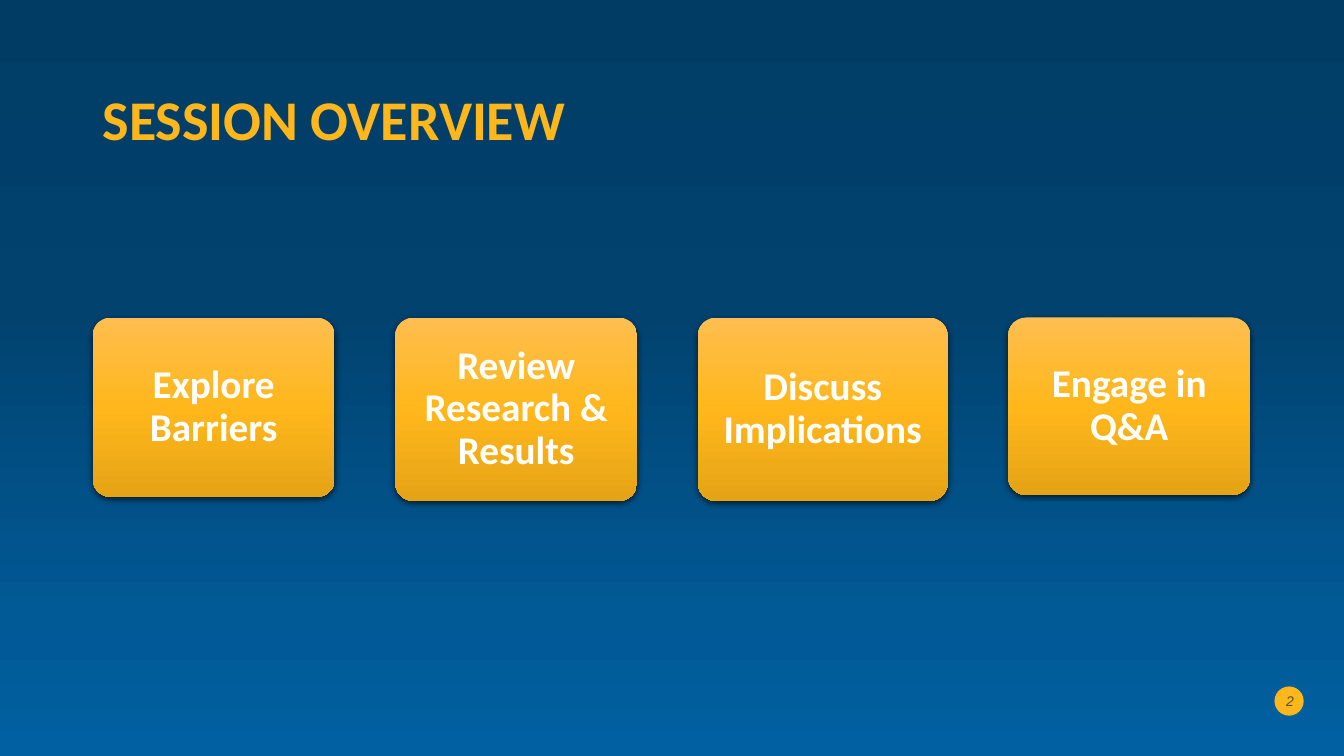
from lxml.etree import SubElement
from pptx import Presentation
from pptx.dml.color import RGBColor
from pptx.enum.shapes import MSO_SHAPE as Shape
from pptx.enum.text import MSO_ANCHOR as Anchor, PP_ALIGN as Align
from pptx.oxml.ns import qn
from pptx.util import Inches, Pt

GOLD = "FFB71B"
WHITE = "FFFFFF"
PALE_GOLD = "FFE6B1"
DARK_TEAL = "00292E"
BACKGROUND_STOPS = [(0, "013C65"), (41, "01426F"), (81, "015995"), (100, "0160A1")]
CARD_STOPS = [(0, "FFBE4F"), (50, GOLD), (100, "E5A316")]
CARDS = [
    ("Explore Barriers", 2.4, 1.78),
    ("Review Research & Results", 2.4, 1.82),
    ("Discuss Implications", 2.48, 1.82),
    ("Engage in Q&A", 2.4, 1.76),
]
CARD_LEFT, CARD_TOP, CARD_GAP = 0.92, 3.15, 0.6


def color(value):
    return RGBColor.from_string(value)


def add_xml_color(parent, value, alpha=100):
    element = SubElement(parent, qn("a:srgbClr"), val=value)
    if alpha < 100:
        SubElement(element, qn("a:alpha"), val=str(alpha * 1000))


class SlideBuilder:
    font = "Calibri"

    def __init__(self, slide):
        self.slide = slide

    def gradient(self, fill, element, stops):
        fill.gradient()
        fill.gradient_angle = 270
        stop_list = element.xpath(".//a:gsLst")[0]
        for stop in list(stop_list):
            stop_list.remove(stop)
        for position, value in stops:
            stop = SubElement(stop_list, qn("a:gs"), pos=str(position * 1000))
            add_xml_color(stop, value)

    def background(self, stops):
        self.gradient(self.slide.background.fill, self.slide._element, stops)

    def shape(self, kind, left, top, width, height):
        shape = self.slide.shapes.add_shape(
            kind, Inches(left), Inches(top), Inches(width), Inches(height))
        shape.line.fill.background()
        shape.shadow.inherit = False
        return shape

    def set_text(self, shape, text, size, value, align, font=None, bold=False):
        frame = shape.text_frame
        frame.word_wrap = True
        frame.vertical_anchor = Anchor.MIDDLE
        paragraph = frame.paragraphs[0]
        paragraph.text = text
        paragraph.alignment = align
        paragraph.font.name = font or self.font
        paragraph.font.size = Pt(size)
        paragraph.font.bold = bold
        paragraph.font.color.rgb = color(value)
        return paragraph

    def text(self, left, top, width, height, *content, **style):
        box = self.slide.shapes.add_textbox(
            Inches(left), Inches(top), Inches(width), Inches(height))
        return self.set_text(box, *content, **style)

    def title(self, text):
        paragraph = self.text(0.92, 0.49, 11.5, 1.45, text, 40, GOLD, Align.LEFT, bold=True)
        paragraph.line_spacing = 0.9
        properties = paragraph.font._element
        outline = SubElement(properties, qn("a:ln"), w=str(Pt(0.75)))
        add_xml_color(SubElement(outline, qn("a:solidFill")), PALE_GOLD)
        properties.insert(0, outline)

    def card(self, text, left, top, width, height):
        card = self.shape(Shape.ROUNDED_RECTANGLE, left, top, width, height)
        card.adjustments[0] = 0.1
        self.gradient(card.fill, card._element, CARD_STOPS)
        effects = card._element.spPr.find(qn("a:effectLst"))
        shadow = SubElement(
            effects, qn("a:outerShdw"), blurRad=str(Pt(4.5)), dist=str(Pt(1.5)),
            dir="5400000", algn="ctr", rotWithShape="0")
        add_xml_color(shadow, "000000", 63)
        frame = card.text_frame
        frame.margin_left = frame.margin_right = Inches(0.06)
        frame.margin_top = frame.margin_bottom = Inches(0.04)
        paragraph = self.set_text(card, text, 28, WHITE, Align.CENTER, bold=True)
        paragraph.line_spacing = 0.9

    def page_number(self, number):
        badge = self.shape(Shape.OVAL, 12.64, 6.81, 0.29, 0.29)
        badge.fill.solid()
        badge.fill.fore_color.rgb = color(GOLD)
        paragraph = self.text(
            12.54, 6.75, 0.39, 0.4, number, 10, DARK_TEAL, Align.RIGHT, font="Arial")
        paragraph.font.italic = True
        number_color = paragraph.font._element.xpath("./a:solidFill/a:srgbClr")[0]
        SubElement(number_color, qn("a:alpha"), val="70000")


def main():
    presentation = Presentation()
    presentation.slide_width = Inches(13.33)
    presentation.slide_height = Inches(7.5)
    builder = SlideBuilder(presentation.slides.add_slide(presentation.slide_layouts[6]))
    builder.background(BACKGROUND_STOPS)
    builder.page_number("2")
    builder.title("SESSION OVERVIEW")
    left = CARD_LEFT
    for text, width, height in CARDS:
        builder.card(text, left, CARD_TOP, width, height)
        left += width + CARD_GAP
    presentation.save("out.pptx")


if __name__ == "__main__":
    main()
